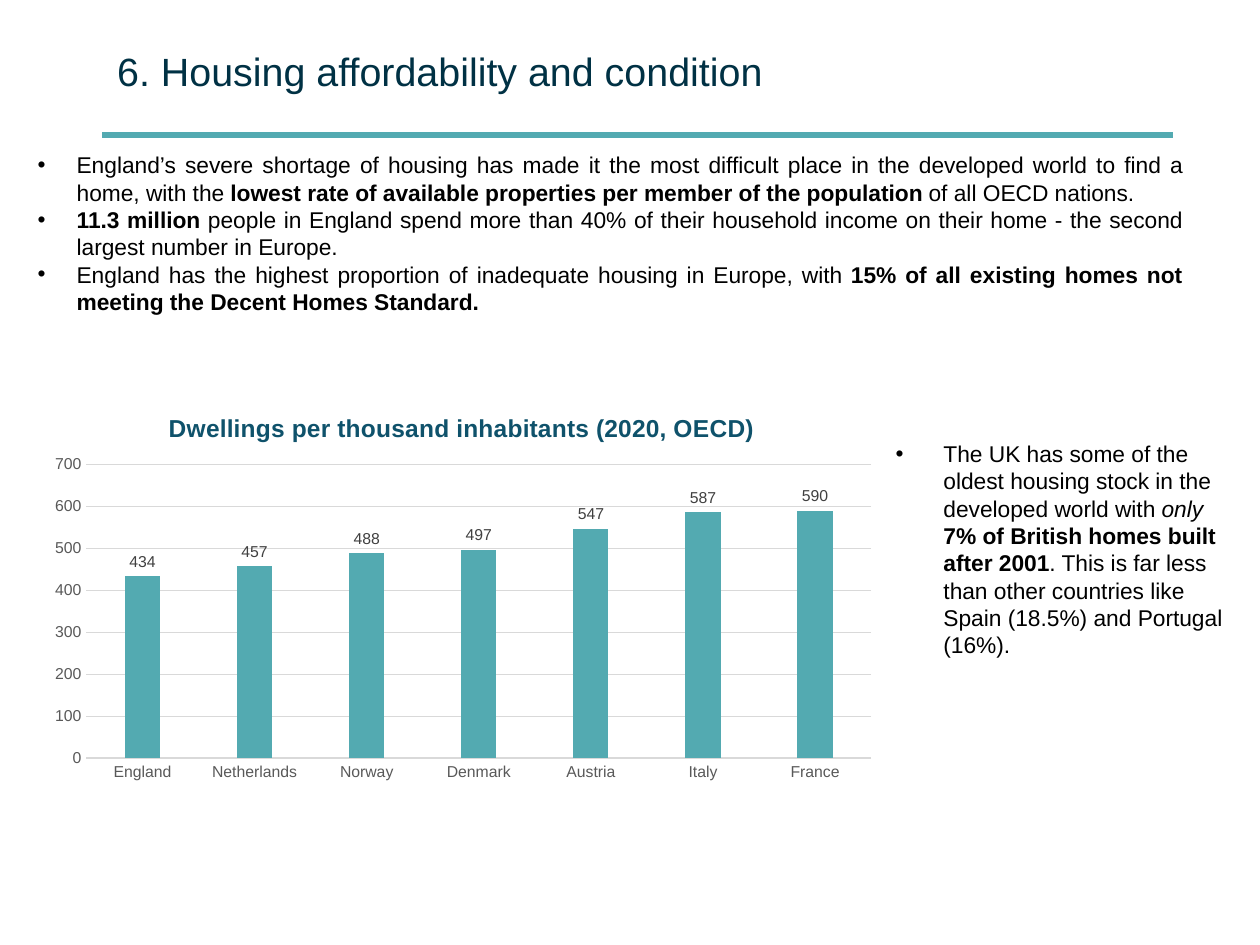
import dataclasses

import lxml.etree
import pptx
import pptx.chart.data
import pptx.dml.color
import pptx.enum.chart
import pptx.enum.shapes
import pptx.enum.text
import pptx.oxml
import pptx.oxml.ns
import pptx.util
from pptx.util import Inches

FONT = "Arial"
COLORS = {
    "teal": "53AAB1",
    "title": "003144",
    "body": "000000",
    "chart_title": "0F526B",
    "axis": "595959",
    "label": "404040",
    "grid": "D9D9D9",
}


@dataclasses.dataclass(frozen=True)
class Span:
    text: str
    bold: bool = False
    italic: bool = False


@dataclasses.dataclass(frozen=True)
class BulletBox:
    left: float
    top: float
    width: float
    height: float
    indent: float
    align: pptx.enum.text.PP_ALIGN
    paragraphs: tuple


BULLET_BOXES = (
    BulletBox(0.2, 1.15, 9.28, 1.41, 0.31, pptx.enum.text.PP_ALIGN.JUSTIFY, (
        (
            Span("England’s severe shortage of housing has made it the most difficult "
                 "place in the developed world to find a home, with the "),
            Span("lowest rate of available properties per member of the population ", bold=True),
            Span("of all OECD nations."),
        ),
        (
            Span("11.3 million ", bold=True),
            Span("people in England spend more than 40% of their household income on "
                 "their home - the second largest number in Europe."),
        ),
        (
            Span("England has the highest proportion of inadequate housing in Europe, with "),
            Span("15% of all existing homes not meeting the Decent Homes Standard.", bold=True),
        ),
    )),
    BulletBox(7.01, 3.44, 2.8, 1.85, 0.38, pptx.enum.text.PP_ALIGN.LEFT, (
        (
            Span("The UK has some of the oldest housing stock in the developed world with "),
            Span("only ", italic=True),
            Span("7% of British homes built after 2001", bold=True),
            Span(". This is far less than other countries like Spain (18.5%) and Portugal (16%)."),
        ),
    )),
)

DWELLINGS = {
    "England": 434,
    "Netherlands": 457,
    "Norway": 488,
    "Denmark": 497,
    "Austria": 547,
    "Italy": 587,
    "France": 590,
}
PLOT_AREA = {"x": 0.06, "y": 0.18, "w": 0.92, "h": 0.74}


def rgb(name: str) -> pptx.dml.color.RGBColor:
    return pptx.dml.color.RGBColor.from_string(COLORS[name])


def format_font(font, size: float, color: str, bold: bool = False, italic: bool = False) -> None:
    font.name = FONT
    font.size = pptx.util.Pt(size)
    font.bold = bold
    font.italic = italic
    font.color.rgb = rgb(color)


def add_text(para, text: str, **font_format) -> None:
    run = para.add_run()
    run.text = text
    format_font(run.font, **font_format)


def set_bullet(para, indent: float) -> None:
    properties = para._p.get_or_add_pPr()
    properties.set("marL", str(Inches(indent)))
    properties.set("indent", str(-Inches(indent)))
    font = lxml.etree.SubElement(properties, pptx.oxml.ns.qn("a:buFont"))
    font.set("typeface", FONT)
    bullet = lxml.etree.SubElement(properties, pptx.oxml.ns.qn("a:buChar"))
    bullet.set("char", "•")


def add_bullet_box(page, content: BulletBox) -> None:
    box = page.shapes.add_textbox(
        Inches(content.left), Inches(content.top), Inches(content.width), Inches(content.height))
    frame = box.text_frame
    frame.word_wrap = True
    frame.auto_size = pptx.enum.text.MSO_AUTO_SIZE.SHAPE_TO_FIT_TEXT
    for index, spans in enumerate(content.paragraphs):
        para = frame.add_paragraph() if index else frame.paragraphs[0]
        para.alignment = content.align
        set_bullet(para, content.indent)
        for span in spans:
            add_text(para, span.text, size=13, color="body", bold=span.bold, italic=span.italic)


def add_title(page, text: str) -> None:
    title = page.shapes.title
    title.left, title.top = Inches(0.83), Inches(0.07)
    title.width, title.height = Inches(8.5), Inches(0.98)
    title.text_frame.vertical_anchor = pptx.enum.text.MSO_ANCHOR.MIDDLE
    para = title.text_frame.paragraphs[0]
    para.alignment = pptx.enum.text.PP_ALIGN.LEFT
    add_text(para, text, size=22.5, color="title")


def add_rule(page) -> None:
    rule = page.shapes.add_connector(
        pptx.enum.shapes.MSO_CONNECTOR.STRAIGHT,
        Inches(0.81), Inches(1.07), Inches(9.31), Inches(1.07))
    rule.line.color.rgb = rgb("teal")
    rule.line.width = pptx.util.Pt(3.5)
    lxml.etree.SubElement(rule._element.spPr, pptx.oxml.ns.qn("a:effectLst"))


def set_plot_layout(chart) -> None:
    plot_area = chart._chartSpace.chart.plotArea
    for old in plot_area.findall(pptx.oxml.ns.qn("c:layout")):
        plot_area.remove(old)
    layout = lxml.etree.Element(pptx.oxml.ns.qn("c:layout"))
    manual = lxml.etree.SubElement(layout, pptx.oxml.ns.qn("c:manualLayout"))
    settings = {"layoutTarget": "inner", "xMode": "edge", "yMode": "edge", **PLOT_AREA}
    for name, value in settings.items():
        lxml.etree.SubElement(manual, pptx.oxml.ns.qn(f"c:{name}")).set("val", str(value))
    plot_area.insert(0, layout)


def add_dwellings_chart(page) -> None:
    data = pptx.chart.data.CategoryChartData()
    data.categories = list(DWELLINGS)
    data.add_series("Series 1", list(DWELLINGS.values()))
    chart = page.shapes.add_chart(
        pptx.enum.chart.XL_CHART_TYPE.COLUMN_CLUSTERED,
        Inches(0.28), Inches(3.12), Inches(6.77), Inches(3.15), data).chart
    format_font(chart.font, size=10, color="body")
    chart.has_legend = False
    chart.has_title = True
    chart.chart_title.include_in_layout = False
    add_text(chart.chart_title.text_frame.paragraphs[0],
             "Dwellings per thousand inhabitants (2020, OECD)",
             size=14, color="chart_title", bold=True)

    for axis in (chart.category_axis, chart.value_axis):
        axis.major_tick_mark = pptx.enum.chart.XL_TICK_MARK.NONE
        axis.minor_tick_mark = pptx.enum.chart.XL_TICK_MARK.NONE
        format_font(axis.tick_labels.font, size=9, color="axis")
    values = chart.value_axis
    values.minimum_scale, values.maximum_scale, values.major_unit = 0, 700, 100
    values.format.line.fill.background()
    for line in (chart.category_axis.format.line, values.major_gridlines.format.line):
        line.color.rgb = rgb("grid")
        line.width = pptx.util.Pt(0.75)

    plot = chart.plots[0]
    plot.gap_width, plot.overlap = 219, -27
    plot.vary_by_categories = False
    series = plot.series[0]
    series.format.fill.solid()
    series.format.fill.fore_color.rgb = rgb("teal")
    labels = series.data_labels
    labels.show_value = True
    labels.position = pptx.enum.chart.XL_LABEL_POSITION.OUTSIDE_END
    format_font(labels.font, size=9, color="label")
    set_plot_layout(chart)


def main() -> None:
    deck = pptx.Presentation()
    deck.slide_width, deck.slide_height = Inches(10), Inches(7.5)
    page = deck.slides.add_slide(deck.slide_layouts[5])
    add_rule(page)
    add_title(page, "6. Housing affordability and condition")
    for content in BULLET_BOXES:
        add_bullet_box(page, content)
    add_dwellings_chart(page)
    deck.save("out.pptx")


if __name__ == "__main__":
    main()
